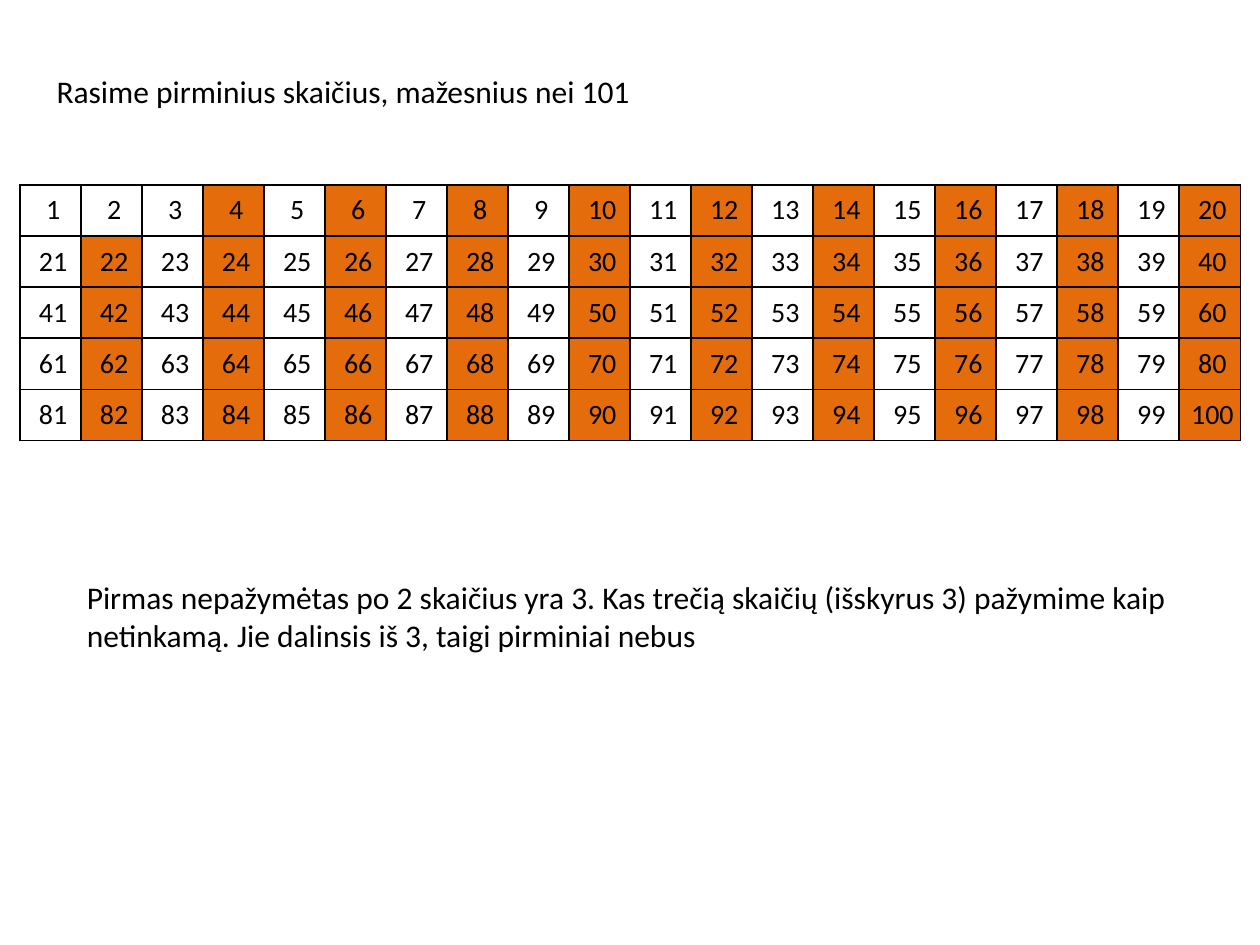
from lxml.etree import SubElement
from pptx import Presentation
from pptx.dml.color import RGBColor
from pptx.enum.text import MSO_ANCHOR as Anchor, PP_ALIGN as Align
from pptx.oxml.ns import qn
from pptx.util import Pt

TITLE = "Rasime pirminius skaičius, mažesnius nei 101"
NOTE = ("Pirmas nepažymėtas po 2 skaičius yra 3. Kas trečią skaičių (išskyrus 3) "
        "pažymime kaip netinkamą. Jie dalinsis iš 3, taigi pirminiai nebus")
ROWS, COLUMNS = 5, 20
TABLE_LEFT, TABLE_TOP = 11.4, 105.6
CELL_WIDTH, CELL_HEIGHT = 34.88, 29.23
BLACK, WHITE, ORANGE = "000000", "FFFFFF", "E46C0A"


def color(value):
    return RGBColor.from_string(value)


def write(frame, text, size=18, align=Align.LEFT):
    para = frame.paragraphs[0]
    para.alignment = align
    span = para.add_run()
    span.text = text
    span.font.name = "Calibri"
    span.font.size = Pt(size)
    span.font.color.rgb = color(BLACK)


def add_text(page, text, left, top, width, height):
    box = page.shapes.add_textbox(Pt(left), Pt(top), Pt(width), Pt(height))
    box.text_frame.word_wrap = True
    write(box.text_frame, text)


def add_borders(cell):
    properties = cell._tc.get_or_add_tcPr()
    for side in ("a:lnL", "a:lnR", "a:lnT", "a:lnB"):
        line = SubElement(properties, qn(side), w=str(Pt(1)))
        fill = SubElement(line, qn("a:solidFill"))
        SubElement(fill, qn("a:srgbClr"), val=BLACK)


def add_number_cell(cell, number):
    cell.margin_left, cell.margin_right = Pt(6), Pt(3)
    cell.margin_top = cell.margin_bottom = Pt(3.6)
    cell.vertical_anchor = Anchor.MIDDLE
    add_borders(cell)
    crossed_out = number > 2 and number % 2 == 0
    cell.fill.solid()
    cell.fill.fore_color.rgb = color(ORANGE if crossed_out else WHITE)
    write(cell.text_frame, str(number), size=16, align=Align.CENTER)


def add_sieve(page):
    table = page.shapes.add_table(
        ROWS, COLUMNS, Pt(TABLE_LEFT), Pt(TABLE_TOP),
        Pt(COLUMNS * CELL_WIDTH), Pt(ROWS * CELL_HEIGHT)).table
    table.first_row = table.horz_banding = False
    for column in table.columns:
        column.width = Pt(CELL_WIDTH)
    for row in table.rows:
        row.height = Pt(CELL_HEIGHT)
    for number, cell in enumerate(table.iter_cells(), start=1):
        add_number_cell(cell, number)


def main():
    deck = Presentation()
    deck.slide_width, deck.slide_height = Pt(720), Pt(540)
    page = deck.slides.add_slide(deck.slide_layouts[6])
    add_sieve(page)
    add_text(page, TITLE, 25.2, 37.6, 669, 29)
    add_text(page, NOTE, 42.5, 327, 646.6, 51)
    deck.save("out.pptx")


if __name__ == "__main__":
    main()
